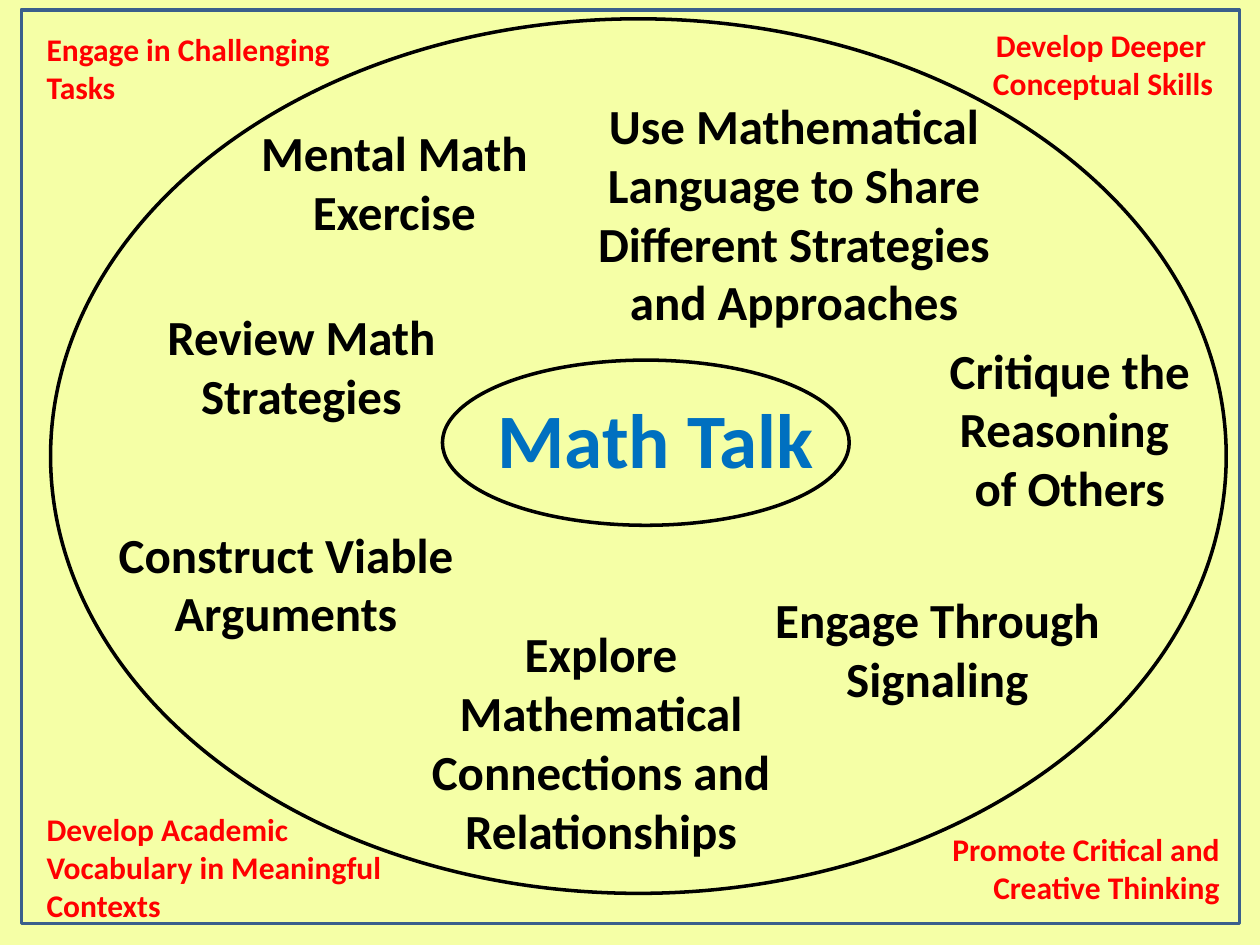
from pptx import Presentation
from pptx import util as u
from pptx.dml.color import RGBColor
from pptx.enum import shapes, text

HUES = {
    "page": "F5FFA6",
    "frame": "3A5F8C",
    "ink": "000000",
    "title": "0070C0",
    "goal": "FF0000",
}
FONT = "Calibri"
LEFT, MID, RIGHT = text.PP_ALIGN.LEFT, text.PP_ALIGN.CENTER, text.PP_ALIGN.RIGHT
RECT, OVAL = shapes.MSO_SHAPE.RECTANGLE, shapes.MSO_SHAPE.OVAL

# Left, top, width, height in cm, then the lines of text
IDEAS = [
    (4.24, 2.34, 7.42, 2.64, ["Mental Math", "Exercise"]),
    (14.45, 11.76, 8.89, 2.64, ["Engage Through Signaling"]),
    (1.63, 6.05, 8.89, 2.64, ["Review Math Strategies"]),
    (7.67, 12.45, 8.89, 5.05,
     ["Explore Mathematical Connections and Relationships"]),
    (1.32, 10.44, 8.89, 2.64, ["Construct Viable Arguments"]),
    (17.12, 6.73, 8.89, 3.84, ["Critique the Reasoning ", "of Others"]),
    (11.56, 1.8, 8.89, 5.05,
     ["Use Mathematical Language to Share Different Strategies and Approaches"]),
]
GOALS = [
    (19.71, 0.41, 5.0, 1.8, RIGHT, ["Develop Deeper ", "Conceptual Skills"]),
    (18.87, 16.61, 5.97, 1.8, RIGHT, ["Promote Critical and", "Creative Thinking"]),
    (0.69, 16.21, 7.32, 2.57, LEFT,
     ["Develop Academic", "Vocabulary in Meaningful", "Contexts"]),
    (0.69, 0.48, 6.35, 1.8, LEFT, ["Engage in Challenging", "Tasks"]),
]


def hue(name):
    return RGBColor.from_string(HUES[name])


def add_outline(slide, kind, box, name):
    """Draw an unfilled shape with a 2 pt line."""
    shape = slide.shapes.add_shape(kind, *map(u.Cm, box))
    shape.shadow.inherit = False
    shape.fill.background()
    shape.line.color.rgb = hue(name)
    shape.line.width = u.Pt(2)


def add_label(slide, box, lines, size, name, align, wrap=False):
    """Place bold text, one paragraph for each line."""
    frame = slide.shapes.add_textbox(*map(u.Cm, box)).text_frame
    frame.word_wrap = wrap
    frame.auto_size = text.MSO_AUTO_SIZE.SHAPE_TO_FIT_TEXT
    for i, line in enumerate(lines):
        para = frame.add_paragraph() if i else frame.paragraphs[0]
        para.alignment = align
        run = para.add_run()
        run.text = line
        run.font.name = FONT
        run.font.size = u.Pt(size)
        run.font.bold = True
        run.font.color.rgb = hue(name)


def main():
    deck = Presentation()
    deck.slide_width, deck.slide_height = u.Cm(25.4), u.Cm(19.05)
    slide = deck.slides.add_slide(deck.slide_layouts[6])
    slide.background.fill.solid()
    slide.background.fill.fore_color.rgb = hue("page")

    # Central topic
    add_label(slide, (9.78, 7.77, 6.96, 2.13), ["Math Talk"], 44, "title", LEFT)

    # Frame, inner oval and outer oval
    add_outline(slide, RECT, (0.43, 0.2, 24.56, 18.42), "frame")
    add_outline(slide, OVAL, (8.92, 7.26, 8.2, 3.33), "ink")
    add_outline(slide, OVAL, (1.02, 0.38, 23.7, 17.63), "ink")

    # Ideas around the topic
    for *box, lines in IDEAS:
        add_label(slide, box, lines, 28, "ink", MID, wrap=True)

    # Goals in the corners
    for *box, align, lines in GOALS:
        add_label(slide, box, lines, 18, "goal", align)

    deck.save("out.pptx")


if __name__ == "__main__":
    main()
